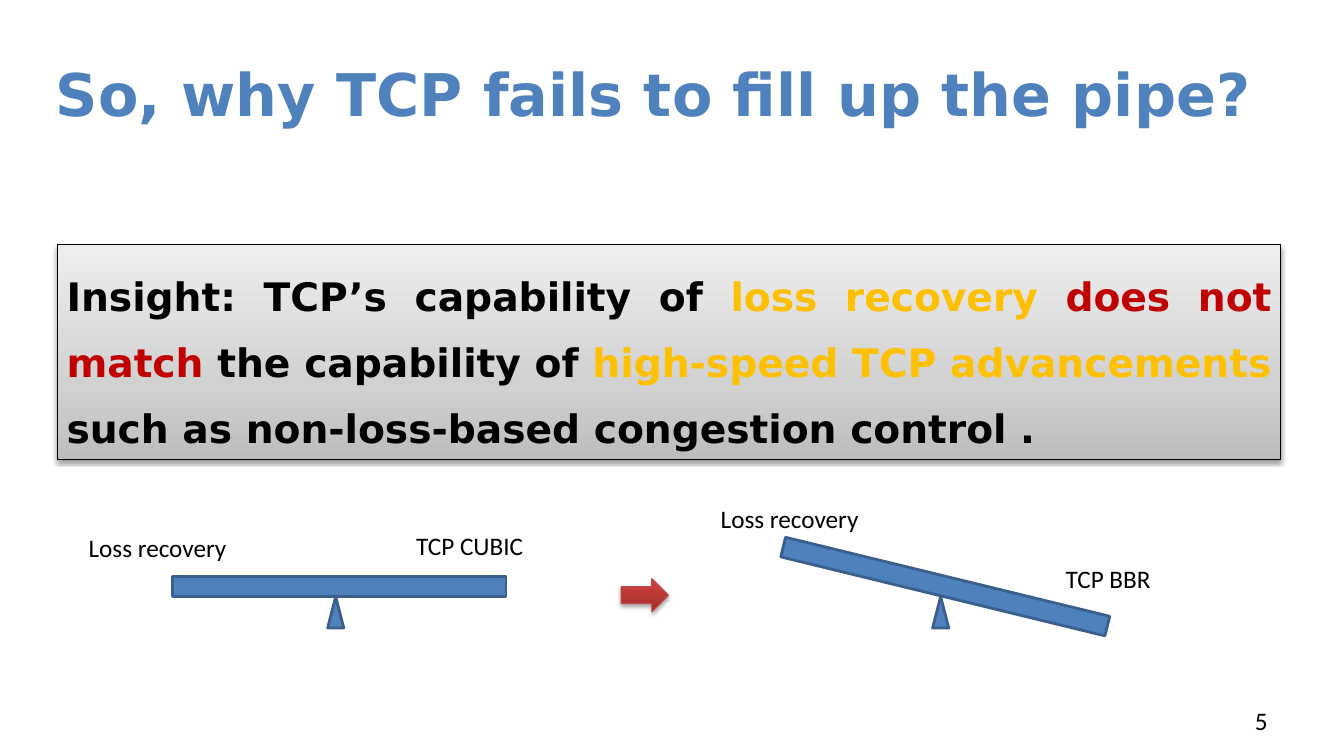
from dataclasses import dataclass

from lxml.etree import SubElement
from pptx import Presentation
from pptx.dml.color import RGBColor
from pptx.enum.shapes import MSO_SHAPE as Preset
from pptx.enum.text import MSO_ANCHOR as Anchor, MSO_AUTO_SIZE as AutoSize, PP_ALIGN as Align
from pptx.oxml.ns import qn
from pptx.shapes.autoshape import Shape
from pptx.slide import Slide
from pptx.util import Inches, Pt


@dataclass(frozen=True)
class Theme:
    heading_font: str = "DejaVu Sans"
    label_font: str = "Calibri"
    title_size: int = 42
    insight_size: int = 28
    label_size: int = 18
    blue: str = "4F81BD"
    dark_blue: str = "3A5F8C"
    black: str = "000000"
    gold: str = "FFC000"
    red: str = "C00000"
    arrow_line: str = "BF4C48"
    insight_stops: tuple = ((0, "BDBDBD"), (35, "D1D1D1"), (100, "EEEEEE"))
    arrow_stops: tuple = ((0, "9C2F2D"), (80, "CB3E3A"), (100, "CE3B37"))


THEME = Theme()


@dataclass(frozen=True)
class Box:
    left: float
    top: float
    width: float
    height: float

    def lengths(self) -> tuple:
        return tuple(Inches(n) for n in (self.left, self.top, self.width, self.height))


@dataclass(frozen=True)
class Style:
    font: str
    size: int
    bold: bool = False


@dataclass(frozen=True)
class Label:
    text: str
    box: Box


@dataclass(frozen=True)
class Seesaw:
    beam_left: float
    pivot_left: float
    tilt: float
    labels: tuple[Label, ...]


TITLE_STYLE = Style(THEME.heading_font, THEME.title_size, True)
INSIGHT_STYLE = Style(THEME.heading_font, THEME.insight_size, True)
LABEL_STYLE = Style(THEME.label_font, THEME.label_size)

INSIGHT = (
    ("Insight: TCP’s capability of ", THEME.black),
    ("loss recovery ", THEME.gold),
    ("does not match ", THEME.red),
    ("the capability of ", THEME.black),
    ("high-speed TCP advancements ", THEME.gold),
    ("such as non-loss-based congestion control .", THEME.black),
)

SEESAWS = (
    Seesaw(1.71, 3.25, 0, (
        Label("Loss recovery", Box(0.78, 5.23, 1.58, 0.4)),
        Label("TCP CUBIC", Box(4.03, 5.21, 1.27, 0.4)),
    )),
    Seesaw(7.72, 9.25, 13.7, (
        Label("Loss recovery", Box(7.05, 4.94, 1.58, 0.4)),
        Label("TCP BBR", Box(10.47, 5.54, 1.05, 0.4)),
    )),
)


def write(shape: Shape, runs: tuple, style: Style, align: Align) -> None:
    paragraph = shape.text_frame.paragraphs[0]
    paragraph.alignment = align
    for text, color in runs:
        run = paragraph.add_run()
        run.text = text
        run.font.name = style.font
        run.font.size = Pt(style.size)
        run.font.bold = style.bold
        run.font.color.rgb = RGBColor.from_string(color)


def add_text(slide: Slide, box: Box, text: str, color: str, style: Style,
             align: Align = Align.LEFT, wrap: bool = True) -> Shape:
    shape = slide.shapes.add_textbox(*box.lengths())
    shape.text_frame.word_wrap = wrap
    write(shape, ((text, color),), style, align)
    return shape


def add_preset(slide: Slide, preset: Preset, box: Box, line: str, width: float) -> Shape:
    shape = slide.shapes.add_shape(preset, *box.lengths())
    shape.shadow.inherit = False
    shape.line.color.rgb = RGBColor.from_string(line)
    shape.line.width = Pt(width)
    return shape


def set_gradient(shape: Shape, stops: tuple) -> None:
    shape.fill.gradient()
    shape.fill.gradient_angle = 90
    stop_list = shape.element.spPr.find(qn("a:gradFill")).find(qn("a:gsLst"))
    for stop in list(stop_list):
        stop_list.remove(stop)
    for position, color in stops:
        stop = SubElement(stop_list, qn("a:gs"), pos=str(position * 1000))
        SubElement(stop, qn("a:srgbClr"), val=color)


def set_shadow(shape: Shape, opacity: int, distance: float) -> None:
    effects = shape.element.spPr.find(qn("a:effectLst"))
    shadow = SubElement(effects, qn("a:outerShdw"), blurRad=str(Pt(3.1)),
                        dist=str(Pt(distance)), dir="5400000", rotWithShape="0")
    color = SubElement(shadow, qn("a:srgbClr"), val=THEME.black)
    SubElement(color, qn("a:alpha"), val=str(opacity * 1000))


def add_insight(slide: Slide) -> None:
    panel = add_preset(slide, Preset.RECTANGLE, Box(0.57, 2.43, 12.13, 2.13), THEME.black, 0.75)
    set_gradient(panel, THEME.insight_stops)
    set_shadow(panel, 38, 1.6)
    frame = panel.text_frame
    frame.word_wrap = True
    frame.vertical_anchor = Anchor.MIDDLE
    frame.margin_left = frame.margin_right = Inches(0.09)
    frame.margin_top = frame.margin_bottom = Inches(0.04)
    frame.paragraphs[0].line_spacing = 1.4
    write(panel, INSIGHT, INSIGHT_STYLE, Align.JUSTIFY)


def add_seesaw(slide: Slide, seesaw: Seesaw) -> None:
    for label in seesaw.labels:
        text_box = add_text(slide, label.box, label.text, THEME.black, LABEL_STYLE, wrap=False)
        text_box.text_frame.auto_size = AutoSize.SHAPE_TO_FIT_TEXT
    pivot = add_preset(slide, Preset.ISOSCELES_TRIANGLE,
                       Box(seesaw.pivot_left, 5.92, 0.16, 0.31), THEME.dark_blue, 2)
    beam = add_preset(slide, Preset.RECTANGLE,
                      Box(seesaw.beam_left, 5.72, 3.31, 0.2), THEME.dark_blue, 2)
    beam.rotation = seesaw.tilt
    for part in (pivot, beam):
        part.fill.solid()
        part.fill.fore_color.rgb = RGBColor.from_string(THEME.blue)


def main() -> None:
    presentation = Presentation()
    presentation.slide_width = Inches(13.33)
    presentation.slide_height = Inches(7.5)
    slide = presentation.slides.add_slide(presentation.slide_layouts[6])

    # Title
    title = add_text(slide, Box(0.29, 0.3, 12.38, 1.25), "So, why TCP fails to fill up the pipe?",
                     THEME.blue, TITLE_STYLE, Align.CENTER)
    title.text_frame.vertical_anchor = Anchor.MIDDLE

    # Insight panel and page number
    add_insight(slide)
    add_text(slide, Box(9.56, 6.95, 3.11, 0.4), "5", THEME.black, LABEL_STYLE, Align.RIGHT)

    # Balanced and tilted seesaws
    for seesaw in SEESAWS:
        add_seesaw(slide, seesaw)

    # Arrow between the seesaws
    arrow = add_preset(slide, Preset.RIGHT_ARROW, Box(6.16, 5.74, 0.47, 0.33),
                       THEME.arrow_line, 0.75)
    set_gradient(arrow, THEME.arrow_stops)
    set_shadow(arrow, 35, 1.8)

    presentation.save("out.pptx")


if __name__ == "__main__":
    main()
